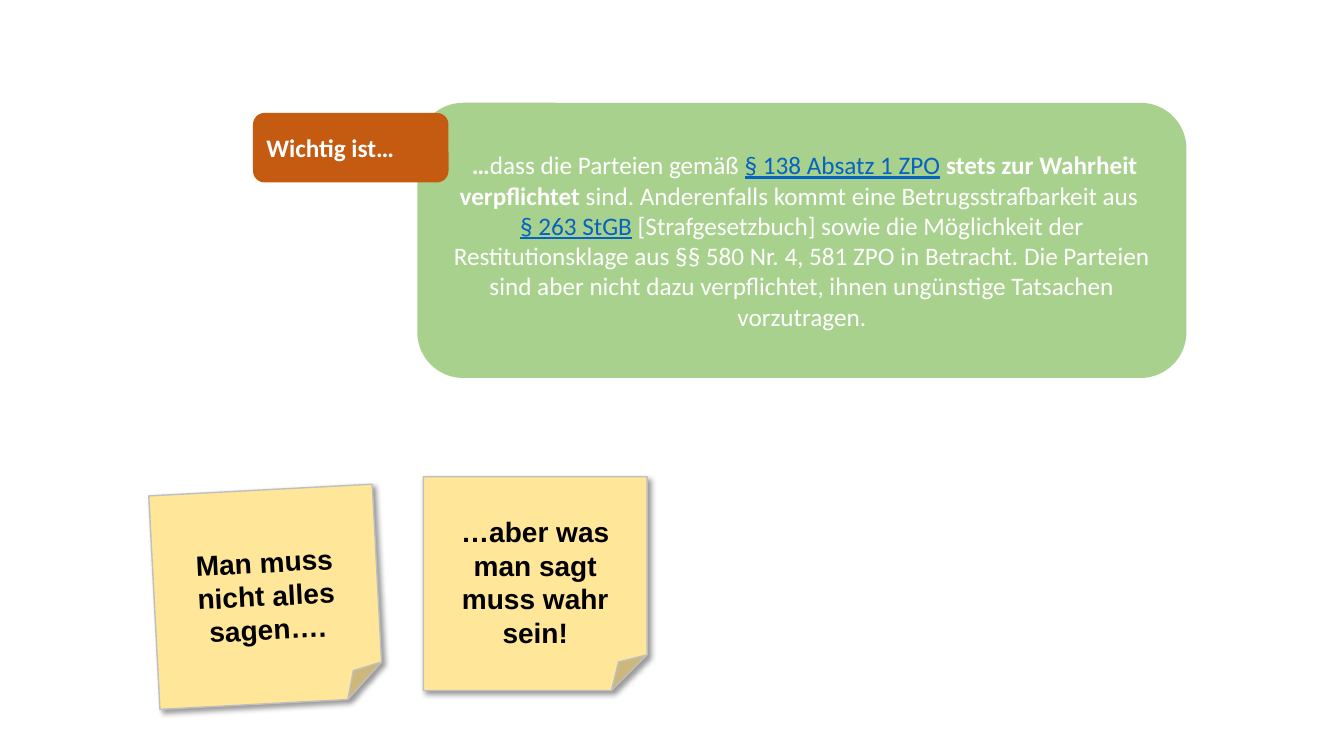
from lxml import etree
from pptx import Presentation
from pptx.dml.color import RGBColor
from pptx.enum.shapes import MSO_SHAPE
from pptx.enum.text import MSO_ANCHOR, PP_ALIGN
from pptx.oxml.ns import qn
from pptx.util import Inches, Pt

ROUNDED = MSO_SHAPE.ROUNDED_RECTANGLE
FOLDED = MSO_SHAPE.FOLDED_CORNER
MIDDLE = MSO_ANCHOR.MIDDLE
LEFT, CENTER = PP_ALIGN.LEFT, PP_ALIGN.CENTER

COLORS = {
    "green": "A9D18E",
    "orange": "C55A11",
    "note": "FFE699",
    "edge": "BFBFBF",
    "reference": "0563C1",
    "white": "FFFFFF",
    "black": "000000",
}
COLUMNS, ROWS = 40, 30
NOTE_COLUMNS, NOTE_ROWS = 6.66, 8.48

REFERENCE = {"color": "reference", "underline": True}
BOLD = {"bold": True}

STATEMENT = [
    [
        (" …", BOLD),
        ("dass die Parteien gemäß ", {}),
        ("§ 138 Absatz 1 ZPO", REFERENCE),
        (" ", {}),
        ("stets zur Wahrheit verpflichtet", BOLD),
        (" sind. Anderenfalls kommt eine Betrugsstrafbarkeit aus ", {}),
    ],
    [
        ("§ 263 StGB", REFERENCE),
        (
            " [Strafgesetzbuch] sowie die Möglichkeit der Restitutionsklage aus "
            "§§ 580 Nr. 4, 581 ZPO in Betracht. Die Parteien sind aber nicht dazu "
            "verpflichtet, ihnen ungünstige Tatsachen vorzutragen.",
            {},
        ),
    ],
]
NOTES = [
    ("Man muss nicht alles sagen….", 4.59, 19.44, -3),
    ("…aber was man sagt muss wahr sein!", 12.6, 18.92, 0),
]


def rgb(name):
    return RGBColor.from_string(COLORS[name])


def add_text(paragraph, text, font="Calibri", size=18, color="white", bold=False, underline=False):
    run = paragraph.add_run()
    run.text = text
    run.font.name = font
    run.font.size = Pt(size)
    run.font.color.rgb = rgb(color)
    run.font.bold = bold
    run.font.underline = underline


class SlideBuilder:
    def __init__(self, presentation):
        self.column = presentation.slide_width / COLUMNS
        self.row = presentation.slide_height / ROWS
        self.slide = presentation.slides.add_slide(presentation.slide_layouts[6])

    def panel(self, preset, left, top, width, height, fill, paragraphs, align=CENTER):
        shape = self.slide.shapes.add_shape(
            preset,
            round(left * self.column),
            round(top * self.row),
            round(width * self.column),
            round(height * self.row),
        )
        shape.shadow.inherit = False
        shape.fill.solid()
        shape.fill.fore_color.rgb = rgb(fill)
        shape.line.fill.background()
        frame = shape.text_frame
        frame.word_wrap = True
        frame.vertical_anchor = MIDDLE
        for index, runs in enumerate(paragraphs):
            paragraph = frame.add_paragraph() if index else frame.paragraphs[0]
            paragraph.alignment = align
            for text, style in runs:
                add_text(paragraph, text, **style)
        return shape

    def sticky_note(self, text, left, top, rotation):
        style = {"font": "Arial", "size": 20, "color": "black", "bold": True}
        note = self.panel(FOLDED, left, top, NOTE_COLUMNS, NOTE_ROWS, "note", [[(text, style)]])
        note.rotation = rotation
        note.text_frame.margin_top = Inches(0.37)
        note.line.color.rgb = rgb("edge")
        note.line.width = Pt(1)
        self.cast_shadow(note)

    def cast_shadow(self, shape):
        effects = shape._element.spPr.find(qn("a:effectLst"))
        shadow = etree.SubElement(
            effects,
            qn("a:outerShdw"),
            blurRad=str(Pt(4)),
            dist=str(Pt(3)),
            dir=str(45 * 60000),
            algn="tl",
            rotWithShape="0",
        )
        tint = etree.SubElement(shadow, qn("a:srgbClr"), val=COLORS["black"])
        etree.SubElement(tint, qn("a:alpha"), val="40000")


def main():
    presentation = Presentation()
    presentation.slide_width = Inches(13.33)
    presentation.slide_height = Inches(7.5)
    builder = SlideBuilder(presentation)
    builder.panel(ROUNDED, 12.42, 4.08, 22.89, 10.92, "green", STATEMENT)
    builder.panel(ROUNDED, 7.53, 4.48, 5.82, 2.76, "orange", [[("Wichtig ist…", BOLD)]], LEFT)
    for note in NOTES:
        builder.sticky_note(*note)
    presentation.save("out.pptx")


if __name__ == "__main__":
    main()
